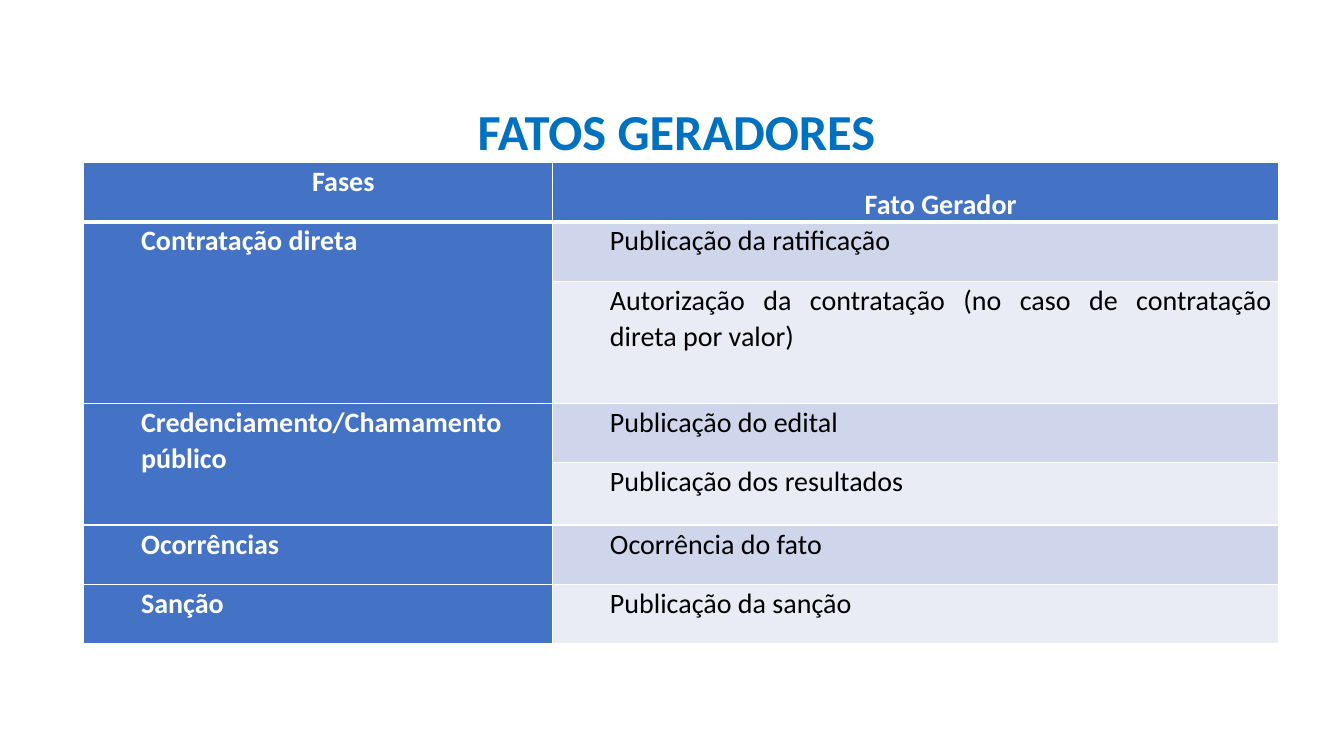
from lxml import etree
from pptx import Presentation
from pptx.dml.color import RGBColor
from pptx.enum.text import MSO_ANCHOR, PP_ALIGN
from pptx.oxml.ns import qn
from pptx.util import Inches, Pt

WHITE = RGBColor(0xFF, 0xFF, 0xFF)
BLACK = RGBColor(0x00, 0x00, 0x00)
TITLE_BLUE = RGBColor(0x00, 0x70, 0xC0)
HEADER_BLUE = RGBColor(0x44, 0x72, 0xC4)
BANDS = [RGBColor(0xCF, 0xD5, 0xEA), RGBColor(0xE9, 0xEB, 0xF5)]


def write(frame, text, size=20, color=WHITE, bold=True, align=PP_ALIGN.JUSTIFY,
          spacing=1.07, after=0, indent=0.5):
    frame.word_wrap = True
    para = frame.paragraphs[0]
    para.alignment = align
    para.line_spacing = spacing
    para.space_after = Pt(after)
    para._p.get_or_add_pPr().set("marL", str(Inches(indent)))
    span = para.add_run()
    span.text = text
    span.font.name = "Calibri"
    span.font.size = Pt(size)
    span.font.bold = bold
    span.font.color.rgb = color


def style_cell(cell, fill, top=1, bottom=1):
    cell.margin_left = cell.margin_right = Inches(0.07)
    cell.margin_top = cell.margin_bottom = 0
    properties = cell._tc.get_or_add_tcPr()
    for side, width in (("lnL", 1), ("lnR", 1), ("lnT", top), ("lnB", bottom)):
        line = etree.SubElement(properties, qn("a:" + side), w=str(Pt(width)))
        solid = etree.SubElement(line, qn("a:solidFill"))
        etree.SubElement(solid, qn("a:srgbClr"), val=str(WHITE))
    cell.fill.solid()
    cell.fill.fore_color.rgb = fill


deck = Presentation()
deck.slide_width = Inches(13.33)
deck.slide_height = Inches(7.5)
page = deck.slides.add_slide(deck.slide_layouts[6])

title = page.shapes.add_textbox(Inches(1), Inches(0.34), Inches(11.42), Inches(1.14))
write(title.text_frame, "FATOS GERADORES", size=36, color=TITLE_BLUE,
      align=PP_ALIGN.CENTER, spacing=2.0, indent=0)

phases = [
    ("Contratação direta", [
        "Publicação da ratificação",
        "Autorização da contratação (no caso de contratação direta por valor)",
    ]),
    ("Credenciamento/Chamamento público", [
        "Publicação do edital",
        "Publicação dos resultados",
    ]),
    ("Ocorrências", ["Ocorrência do fato"]),
    ("Sanção", ["Publicação da sanção"]),
]
column_widths = [4.65, 7.2]
row_heights = [0.59, 0.59, 1.21, 0.59, 0.62, 0.59, 0.59]

table = page.shapes.add_table(
    len(row_heights), len(column_widths), Inches(0.83), Inches(1.61),
    Inches(sum(column_widths)), Inches(sum(row_heights))).table
for column, width in zip(table.columns, column_widths):
    column.width = Inches(width)
for row, height in zip(table.rows, row_heights):
    row.height = Inches(height)

for index, heading in enumerate(["Fases", "Fato Gerador"]):
    cell = table.cell(0, index)
    style_cell(cell, HEADER_BLUE, bottom=3)
    write(cell.text_frame, heading, align=PP_ALIGN.CENTER, after=8 * index)
table.cell(0, 1).vertical_anchor = MSO_ANCHOR.BOTTOM

row = 1
for phase, events in phases:
    first = row
    for event in events:
        top = 3 if row == 1 else 1
        style_cell(table.cell(row, 0), HEADER_BLUE, top=top)
        cell = table.cell(row, 1)
        style_cell(cell, BANDS[(row - 1) % 2], top=top)
        write(cell.text_frame, event, color=BLACK, bold=False, after=8)
        row += 1
    phase_cell = table.cell(first, 0)
    if len(events) > 1:
        phase_cell.merge(table.cell(row - 1, 0))
    write(phase_cell.text_frame, phase)

deck.save("out.pptx")
